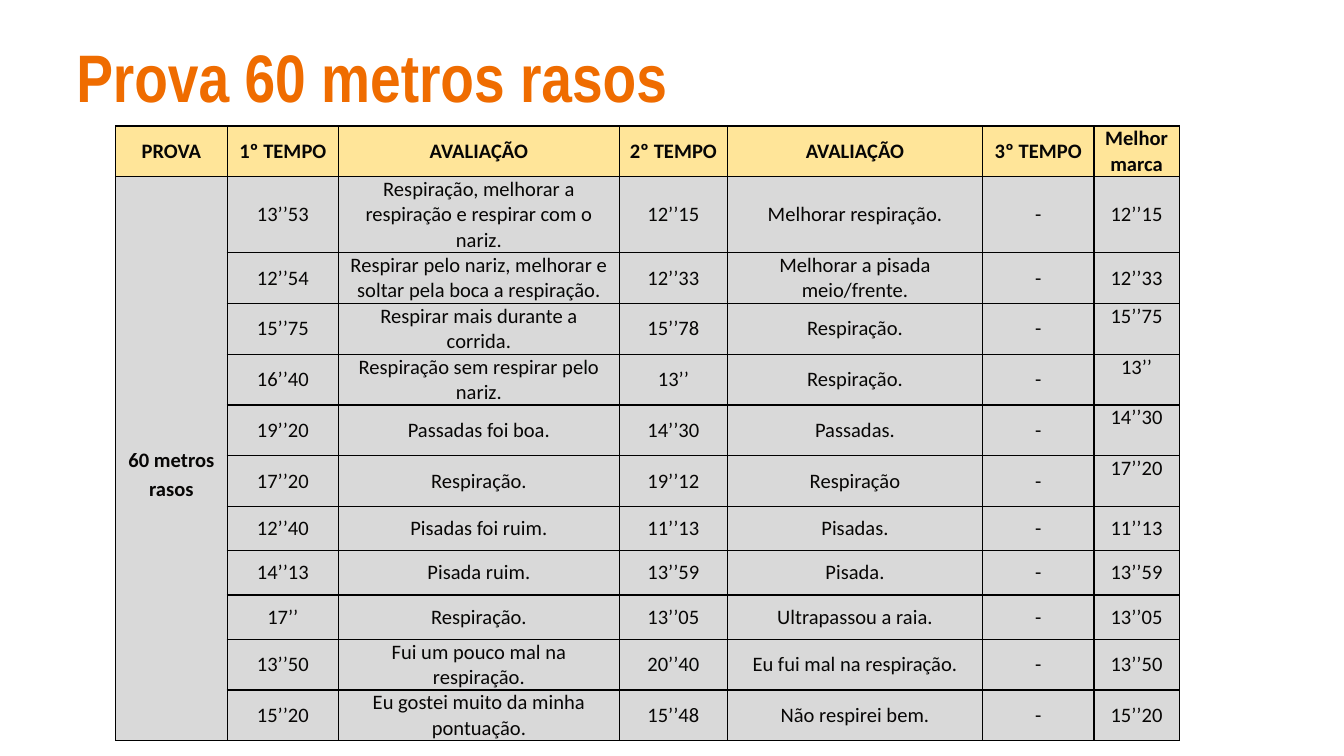
from typing import NamedTuple

from lxml import etree
from pptx import Presentation
from pptx.dml.color import RGBColor
from pptx.enum.text import MSO_ANCHOR, PP_ALIGN
from pptx.oxml.ns import qn
from pptx.util import Pt

CENTER = PP_ALIGN.CENTER
LEFT = PP_ALIGN.LEFT
TOP = MSO_ANCHOR.TOP
MIDDLE = MSO_ANCHOR.MIDDLE

COLORS = {
    "title": "EF6C00",
    "text": "070605",
    "header": "FFE599",
    "body": "D9D9D9",
    "border": "000000",
}


class Run(NamedTuple):
    """One athlete's times, self-assessments and best mark."""
    first: str
    first_review: str
    second: str
    second_review: str
    third: str
    best: str


class TextStyle(NamedTuple):
    font: str
    size: float
    color: str
    bold: bool
    align: PP_ALIGN


TITLE_STYLE = TextStyle("Arial Narrow", 36, "title", True, LEFT)
HEADER_STYLE = TextStyle("Calibri", 11, "text", True, CENTER)
BODY_STYLE = HEADER_STYLE._replace(bold=False)

HEADERS = ["PROVA", "1º TEMPO", "AVALIAÇÃO", "2º TEMPO", "AVALIAÇÃO",
           "3º TEMPO", "Melhor marca"]
RUNS = [
    Run("13’’53", "Respiração, melhorar a respiração e respirar com o nariz.",
        "12’’15", "Melhorar respiração.", "-", "12’’15"),
    Run("12’’54", "Respirar pelo nariz, melhorar e soltar pela boca a respiração.",
        "12’’33", "Melhorar a pisada meio/frente.", "-", "12’’33"),
    Run("15’’75", "Respirar mais durante a corrida.",
        "15’’78", "Respiração.", "-", "15’’75"),
    Run("16’’40", "Respiração sem respirar pelo nariz.",
        "13’’", "Respiração.", "-", "13’’"),
    Run("19’’20", "Passadas foi boa.", "14’’30", "Passadas.", "-", "14’’30"),
    Run("17’’20", "Respiração.", "19’’12", "Respiração", "-", "17’’20"),
    Run("12’’40", "Pisadas foi ruim.", "11’’13", "Pisadas.", "-", "11’’13"),
    Run("14’’13", "Pisada ruim.", "13’’59", "Pisada.", "-", "13’’59"),
    Run("17’’", "Respiração.", "13’’05", "Ultrapassou a raia.", "-", "13’’05"),
    Run("13’’50", "Fui um pouco mal na respiração.",
        "20’’40", "Eu fui mal na respiração.", "-", "13’’50"),
    Run("15’’20", "Eu gostei muito da minha pontuação.",
        "15’’48", "Não respirei bem.", "-", "15’’20"),
]
COLUMN_WIDTHS = [59.7, 59.7, 150.4, 58, 136.6, 59.7, 45.7]
ROW_HEIGHTS = [27.2, 40.7] + [27.2] * 5 + [23.7] * 3 + [27.2] * 2
TOP_ANCHORED_ROWS = range(3, 7)
BEST_COLUMN = len(HEADERS) - 1


def set_values(target, values: dict) -> None:
    for name, value in values.items():
        setattr(target, name, value)


def write_text(frame, text: str, style: TextStyle) -> None:
    para = frame.paragraphs[0]
    para.alignment = style.align
    span = para.add_run()
    span.text = text
    set_values(span.font, {"name": style.font, "size": Pt(style.size),
                           "bold": style.bold})
    span.font.color.rgb = RGBColor.from_string(COLORS[style.color])


def add_borders(cell) -> None:
    properties = cell._tc.get_or_add_tcPr()
    for side in ("lnL", "lnR", "lnT", "lnB"):
        line = etree.SubElement(properties, qn(f"a:{side}"), w=str(Pt(0.75)))
        fill = etree.SubElement(line, qn("a:solidFill"))
        etree.SubElement(fill, qn("a:srgbClr"), val=COLORS["border"])


def format_cell(cell, fill: str) -> None:
    set_values(cell, {"margin_left": Pt(5.4), "margin_right": Pt(5.4),
                      "margin_top": Pt(0), "margin_bottom": Pt(0),
                      "vertical_anchor": MIDDLE})
    add_borders(cell)
    cell.fill.solid()
    cell.fill.fore_color.rgb = RGBColor.from_string(COLORS[fill])


def add_title(page, text: str) -> None:
    box = page.shapes.add_textbox(Pt(33.8), Pt(11.5), Pt(671), Pt(55.4))
    set_values(box.text_frame, {
        "word_wrap": True, "vertical_anchor": TOP,
        "margin_left": Pt(7.2), "margin_right": Pt(7.2),
        "margin_top": Pt(7.2), "margin_bottom": Pt(7.2)})
    write_text(box.text_frame, text, TITLE_STYLE)


def add_results_table(page) -> None:
    table = page.shapes.add_table(
        len(ROW_HEIGHTS), len(COLUMN_WIDTHS), Pt(62), Pt(67.5),
        Pt(sum(COLUMN_WIDTHS)), Pt(sum(ROW_HEIGHTS))).table
    for column, width in zip(table.columns, COLUMN_WIDTHS):
        column.width = Pt(width)
    for row, height in zip(table.rows, ROW_HEIGHTS):
        row.height = Pt(height)
    for index, row in enumerate(table.rows):
        for cell in row.cells:
            format_cell(cell, "body" if index else "header")

    for column, text in enumerate(HEADERS):
        write_text(table.cell(0, column).text_frame, text, HEADER_STYLE)
    for row, run in enumerate(RUNS, start=1):
        for column, text in enumerate(run, start=1):
            write_text(table.cell(row, column).text_frame, text, BODY_STYLE)
    for row in TOP_ANCHORED_ROWS:
        table.cell(row, BEST_COLUMN).vertical_anchor = TOP

    event = table.cell(1, 0)
    event.merge(table.cell(len(RUNS), 0))
    event.margin_top = Pt(15)
    write_text(event.text_frame, "60 metros rasos", HEADER_STYLE)
    event.text_frame.paragraphs[0].line_spacing = 1.15


def main() -> None:
    deck = Presentation()
    set_values(deck, {"slide_width": Pt(720), "slide_height": Pt(405)})
    page = deck.slides.add_slide(deck.slide_layouts[6])
    add_results_table(page)
    add_title(page, "Prova 60 metros rasos")
    deck.save("out.pptx")


if __name__ == "__main__":
    main()
